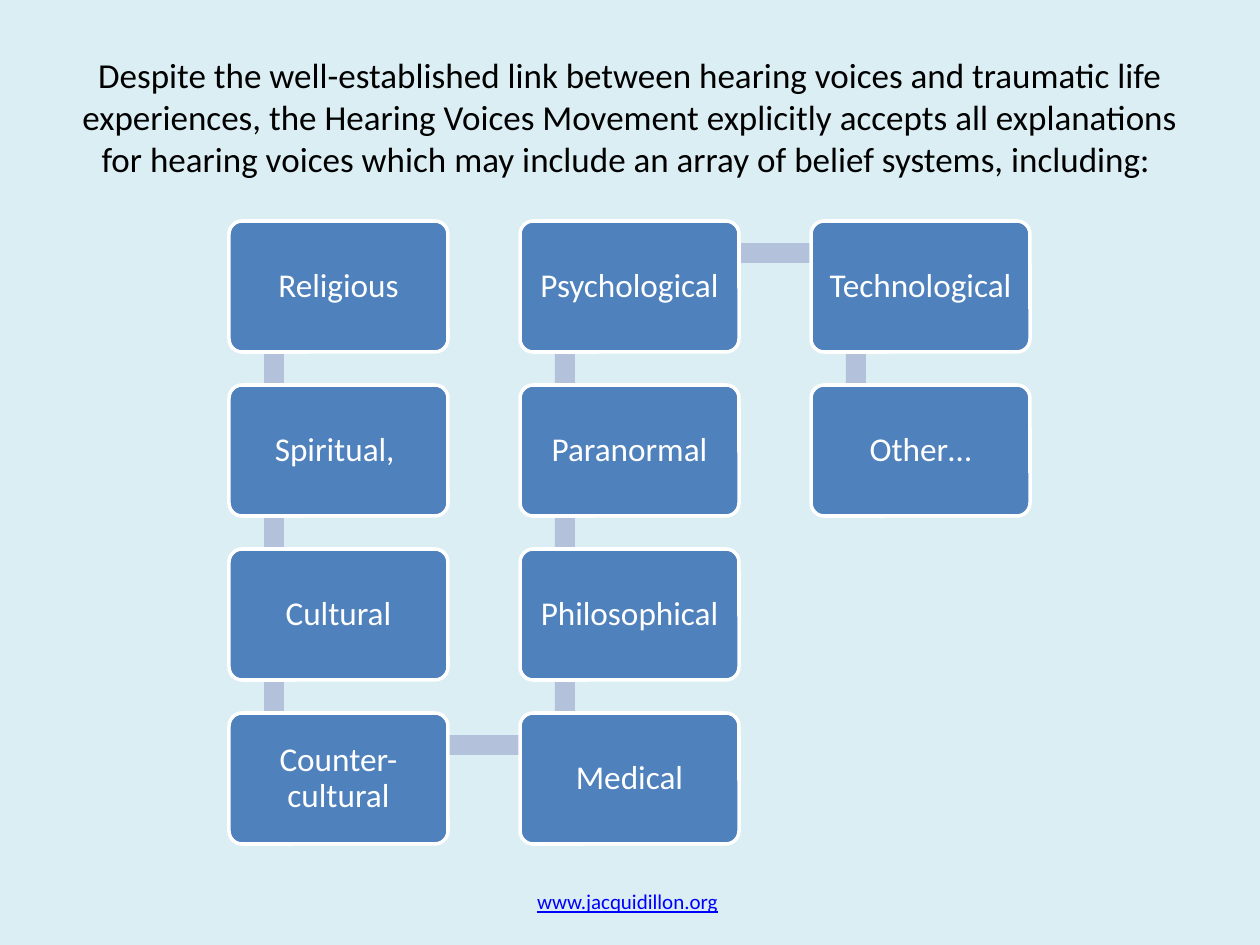
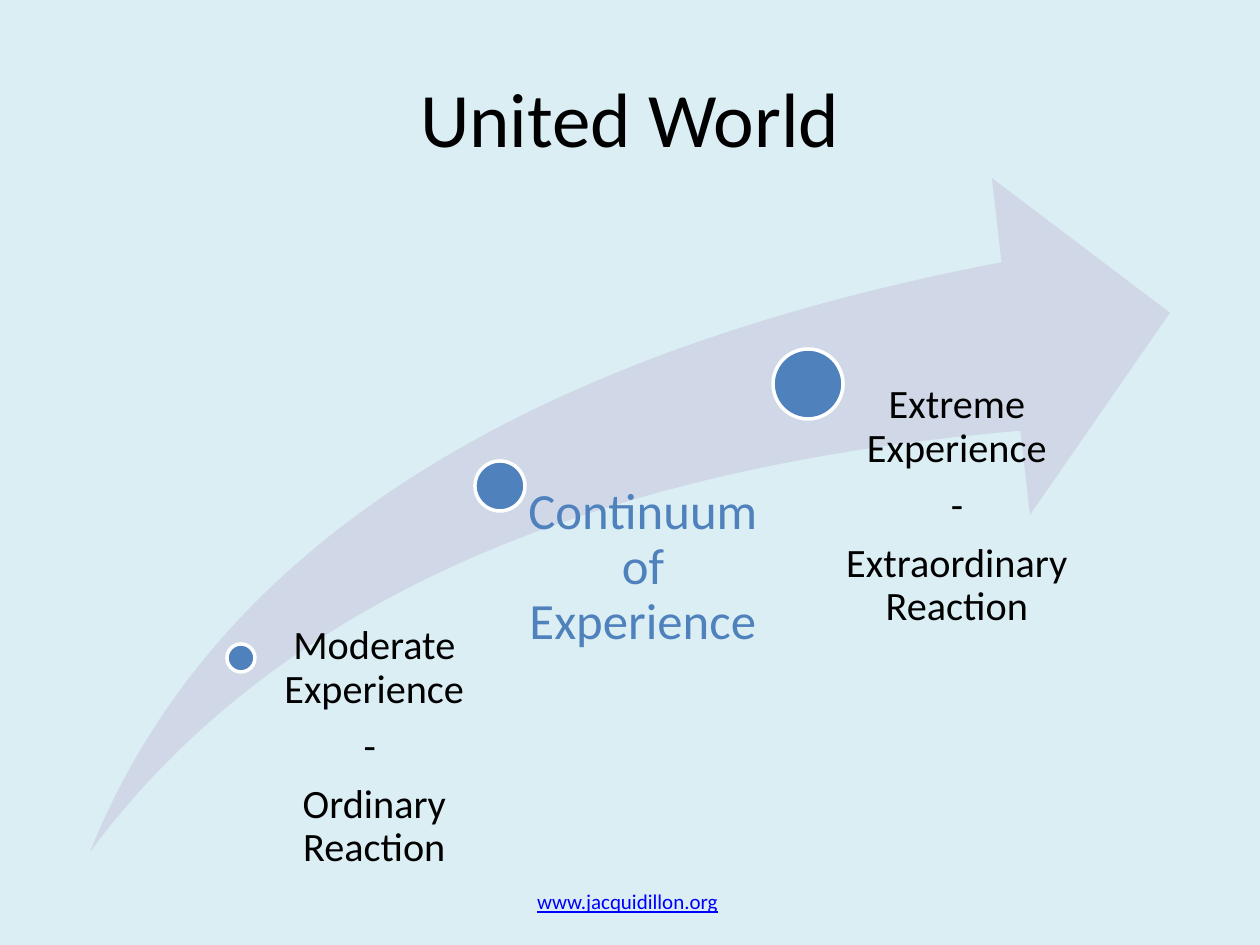
from pptx import Presentation
from pptx.dml.color import RGBColor
from pptx.enum.shapes import MSO_SHAPE
from pptx.enum.text import MSO_ANCHOR, PP_ALIGN
from pptx.util import Emu, Pt

RECT = MSO_SHAPE.RECTANGLE
ROUNDED = MSO_SHAPE.ROUNDED_RECTANGLE
CIRCLE = MSO_SHAPE.OVAL
SWOOSH = MSO_SHAPE.SWOOSH_ARROW
CENTER = PP_ALIGN.CENTER
TOP, MIDDLE = MSO_ANCHOR.TOP, MSO_ANCHOR.MIDDLE

PAGE_WIDTH, PAGE_HEIGHT = 1260, 945
EMU_PER_PX = 9144000 / PAGE_WIDTH

FONT = "Calibri"
SKY, BLUE, WHITE, BLACK = "DBEEF4", "4F81BD", "FFFFFF", "000000"
LINK_BLUE, LINK_BAR, PALE_ARROW = "0000FF", "B3C1DB", "D0D8E8"


def px(length):
    return Emu(round(length * EMU_PER_PX))


def color(hex_code):
    return RGBColor.from_string(hex_code)


def write(shape, paragraphs, size=20, ink=BLACK, anchor=MIDDLE, insets=(13, 6, 13, 6),
          line_spacing=None, space_after=0, underline=None):
    """Fill a shape with centred paragraphs in one format."""
    frame = shape.text_frame
    frame.word_wrap = True
    frame.vertical_anchor = anchor
    (frame.margin_left, frame.margin_top,
     frame.margin_right, frame.margin_bottom) = map(px, insets)
    for index, text in enumerate(paragraphs):
        para = frame.add_paragraph() if index else frame.paragraphs[0]
        para.alignment = CENTER
        para.line_spacing = line_spacing
        para.space_after = Pt(space_after)
        span = para.add_run()
        span.text = text
        span.font.name = FONT
        span.font.size = Pt(size)
        span.font.color.rgb = color(ink)
        span.font.underline = underline


class Deck:
    """Holds the shared style and the current page."""

    def __init__(self):
        self.file = Presentation()
        self.file.slide_width = px(PAGE_WIDTH)
        self.file.slide_height = px(PAGE_HEIGHT)
        self.page = None

    def new_page(self, title, title_size):
        self.page = self.file.slides.add_slide(self.file.slide_layouts[6])
        fill = self.page.background.fill
        fill.solid()
        fill.fore_color.rgb = color(SKY)
        self.text(63, 38, 1134, 157, [title], size=title_size)

    def footer(self):
        self.text(428, 876, 399, 50, ["www.jacquidillon.org"],
                  size=12, ink=LINK_BLUE, underline=True)

    def text(self, left, top, width, height, paragraphs, **style):
        box = self.page.shapes.add_textbox(px(left), px(top), px(width), px(height))
        write(box, paragraphs, **style)

    def shape(self, kind, left, top, width, height, fill, outline=None, adjust=()):
        shape = self.page.shapes.add_shape(kind, px(left), px(top), px(width), px(height))
        shape.shadow.inherit = False
        shape.fill.solid()
        shape.fill.fore_color.rgb = color(fill)
        if outline:
            shape.line.color.rgb = color(outline)
            shape.line.width = Pt(2)
        else:
            shape.line.fill.background()
        for index, value in enumerate(adjust):
            shape.adjustments[index] = value
        return shape


def build_beliefs(deck):
    deck.new_page("Despite the well-established link between hearing voices and traumatic "
                  "life experiences, the Hearing Voices Movement explicitly accepts all "
                  "explanations for hearing voices which may include an array of belief "
                  "systems, including: ", 20)

    # Snaking grid: down the first column, up the second, down the third
    beliefs = ["Religious", "Spiritual, ", "Cultural", "Counter-cultural",
               "Medical", "Philosophical", "Paranormal", "Psychological",
               "Technological", "Other…"]
    rows, column_step, row_step = 4, 291, 164
    spots = []
    for index in range(len(beliefs)):
        column, row = divmod(index, rows)
        if column % 2:
            row = rows - 1 - row
        spots.append((229 + column * column_step, 221 + row * row_step))

    # Bars run behind the boxes from each one to the next
    for (left, top), (next_left, next_top) in zip(spots, spots[1:]):
        if left == next_left:
            deck.shape(RECT, left + 35, min(top, next_top) + 33, 20, row_step, LINK_BAR)
        else:
            deck.shape(RECT, left + 45, top + 22, column_step, 20, LINK_BAR)

    for belief, (left, top) in zip(beliefs, spots):
        box = deck.shape(ROUNDED, left, top, 219, 131, BLUE, WHITE, [0.1])
        write(box, [belief], size=19, ink=WHITE, insets=(14, 14, 14, 14), line_spacing=0.9)
    deck.footer()


def build_continuum(deck):
    deck.new_page("United World", 44)
    deck.shape(SWOOSH, 90, 178, 1080, 674, PALE_ARROW, adjust=[0.25, 0.25])

    # Circle centre and diameter, label top, width, height and inset, then the label
    stages = [
        (241, 658, 28, 625, 252, 261, 15, 23, BLACK,
         ["Moderate Experience", "- ", "Ordinary Reaction"]),
        (500, 486, 50, 486, 260, 367, 26, 29, BLUE, ["Continuum of Experience "]),
        (808, 384, 70, 384, 260, 469, 38, 23, BLACK,
         ["Extreme Experience", "-", "Extraordinary Reaction"]),
    ]
    for x, y, diameter, top, width, height, inset, size, ink, label in stages:
        deck.shape(CIRCLE, x - diameter / 2, y - diameter / 2, diameter, diameter,
                   BLUE, WHITE)
        deck.text(x, top, width, height, label, size=size, ink=ink, anchor=TOP,
                  insets=(inset, 0, 0, 0), line_spacing=0.9, space_after=8)
    deck.footer()


def main():
    deck = Deck()
    build_beliefs(deck)
    build_continuum(deck)
    deck.file.save("out.pptx")


if __name__ == "__main__":
    main()
